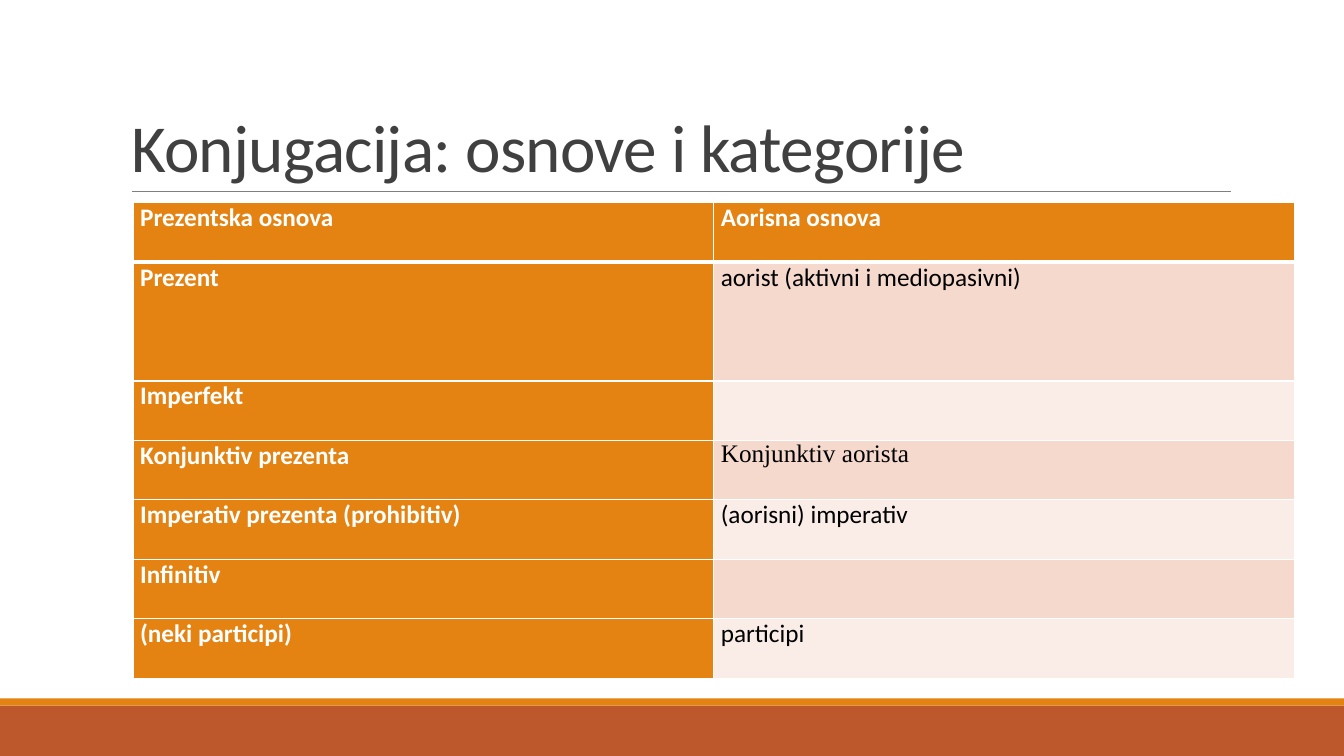
from dataclasses import dataclass

from lxml.etree import SubElement
from pptx import Presentation
from pptx.dml.color import RGBColor
from pptx.enum.shapes import MSO_CONNECTOR, MSO_SHAPE
from pptx.enum.text import MSO_ANCHOR, MSO_AUTO_SIZE, PP_ALIGN
from pptx.oxml.ns import qn
from pptx.slide import Slide
from pptx.table import _Cell as Cell
from pptx.text.text import TextFrame
from pptx.util import Emu, Pt

COLORS = {
    "orange": "E48312",
    "rust": "BD582C",
    "rule": "808080",
    "title": "404040",
    "white": "FFFFFF",
    "black": "000000",
    "odd_band": "F5D9CC",
    "even_band": "FAEDE7",
}
SANS, SERIF = "Calibri", "Times New Roman"
SLIDE_WIDTH, SLIDE_HEIGHT = 1333, 750
COLUMN_WIDTH, ROW_HEIGHT = 576, 59
TITLE_ONLY = 5


@dataclass(frozen=True)
class Band:
    top: int
    height: int
    color: str


@dataclass(frozen=True)
class Category:
    present: str
    aorist: str = ""
    aorist_font: str = SANS
    height: int = ROW_HEIGHT


FOOTER_BANDS = [Band(700, 50, "rust"), Band(693, 7, "orange")]
CATEGORIES = [
    Category("Prezentska osnova", "Aorisna osnova"),
    Category("Prezent", "aorist (aktivni i mediopasivni)", height=2 * ROW_HEIGHT),
    Category("Imperfekt"),
    Category("Konjunktiv prezenta", "Konjunktiv aorista", SERIF),
    Category("Imperativ prezenta (prohibitiv)", "(aorisni) imperativ"),
    Category("Infinitiv"),
    Category("(neki participi)", "participi"),
]


def px(length: int) -> Emu:
    """Convert px, at 100 to the inch, to EMU."""
    return Emu(length * 9144)


def rgb(color: str) -> RGBColor:
    return RGBColor.from_string(COLORS[color])


def add_run(frame: TextFrame, text: str, size: int, color: str,
            font: str = SANS, bold: bool = False):
    run = frame.paragraphs[0].add_run()
    run.text = text
    run.font.name = font
    run.font.size = Pt(size)
    run.font.bold = bold
    run.font.color.rgb = rgb(color)
    return run


def add_band(slide: Slide, band: Band) -> None:
    bar = slide.shapes.add_shape(MSO_SHAPE.RECTANGLE, 0, px(band.top),
                                 px(SLIDE_WIDTH), px(band.height))
    bar.shadow.inherit = False
    bar.fill.solid()
    bar.fill.fore_color.rgb = rgb(band.color)
    bar.line.fill.background()


def add_title_rule(slide: Slide) -> None:
    rule = slide.shapes.add_connector(MSO_CONNECTOR.STRAIGHT, px(131), px(190),
                                      px(1221), px(190))
    rule.line.color.rgb = rgb("rule")
    rule.line.width = Pt(0.5)
    SubElement(rule._element.spPr, qn("a:effectLst"))


def format_title(slide: Slide) -> None:
    title = slide.shapes.title
    title.left, title.top = px(120), px(31)
    title.width, title.height = px(1100), px(159)
    frame = title.text_frame
    frame.word_wrap = True
    frame.auto_size = MSO_AUTO_SIZE.NONE
    frame.vertical_anchor = MSO_ANCHOR.BOTTOM
    frame.paragraphs[0].alignment = PP_ALIGN.LEFT
    frame.paragraphs[0].line_spacing = 0.85
    run = add_run(frame, "Konjugacija: osnove i kategorije", 48, "title")
    run.font._element.set("spc", "-50")


def set_borders(cell: Cell, row: int) -> None:
    """Draw white cell edges, thick between the header and the body."""
    widths = {"L": 1, "R": 1, "T": 3 if row == 1 else 1, "B": 3 if row == 0 else 1}
    properties = cell._tc.get_or_add_tcPr()
    for side, width in widths.items():
        edge = SubElement(properties, qn(f"a:ln{side}"), w=str(Pt(width)))
        fill = SubElement(edge, qn("a:solidFill"))
        SubElement(fill, qn("a:srgbClr"), val=COLORS["white"])


def format_cell(cell: Cell, row: int, text: str, font: str, heading: bool) -> None:
    set_borders(cell, row)
    band = "odd_band" if row % 2 else "even_band"
    cell.fill.solid()
    cell.fill.fore_color.rgb = rgb("orange" if heading else band)
    cell.margin_left = cell.margin_right = px(7)
    cell.margin_top = cell.margin_bottom = 0
    if text:
        cell.text_frame.paragraphs[0].alignment = PP_ALIGN.JUSTIFY
        add_run(cell.text_frame, text, 18, "white" if heading else "black",
                font, heading)


def add_category_table(slide: Slide, categories: list[Category]) -> None:
    height = sum(category.height for category in categories)
    table = slide.shapes.add_table(len(categories), 2, px(132), px(201),
                                   px(2 * COLUMN_WIDTH), px(height)).table
    table.first_col = True
    for column in table.columns:
        column.width = px(COLUMN_WIDTH)
    for row, category in enumerate(categories):
        table.rows[row].height = px(category.height)
        format_cell(table.cell(row, 0), row, category.present, SANS, True)
        format_cell(table.cell(row, 1), row, category.aorist,
                    category.aorist_font, row == 0)


def main() -> None:
    deck = Presentation()
    deck.slide_width, deck.slide_height = px(SLIDE_WIDTH), px(SLIDE_HEIGHT)
    slide = deck.slides.add_slide(deck.slide_layouts[TITLE_ONLY])
    for band in FOOTER_BANDS:
        add_band(slide, band)
    add_title_rule(slide)
    format_title(slide)
    add_category_table(slide, CATEGORIES)
    deck.save("out.pptx")


if __name__ == "__main__":
    main()
